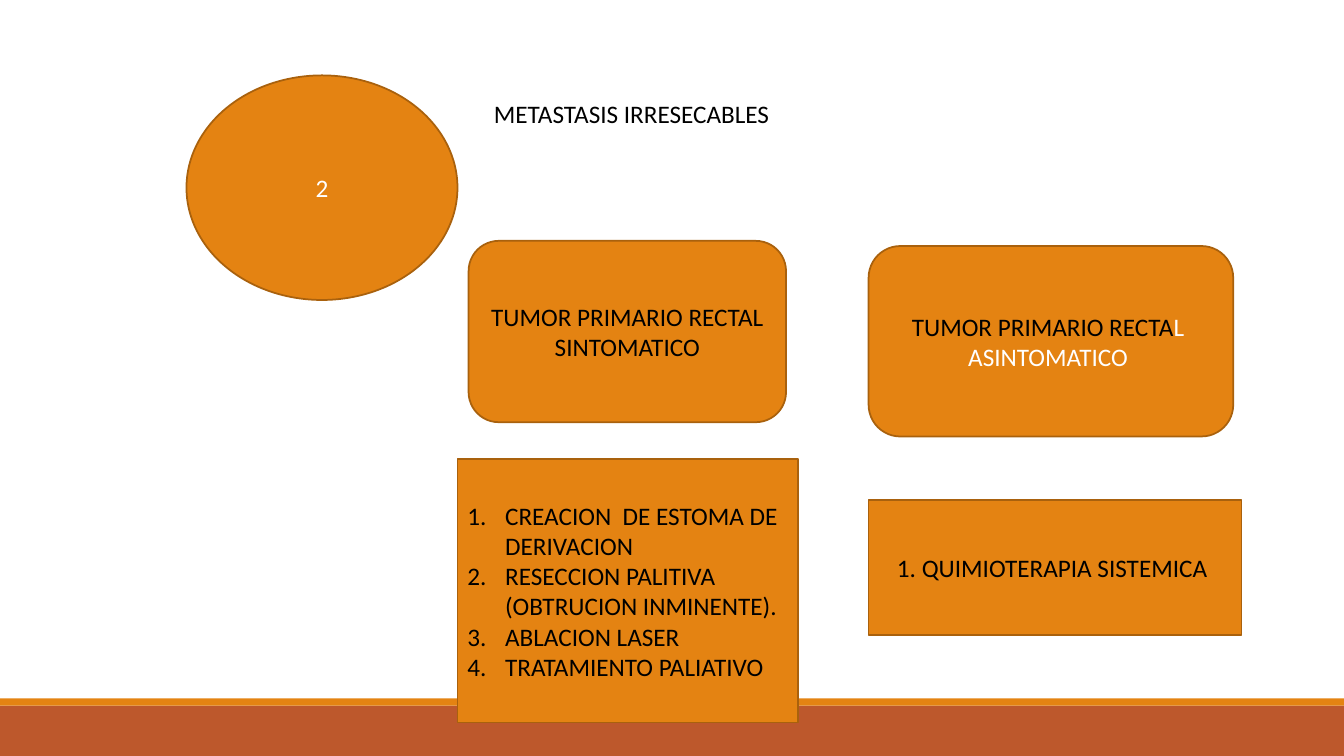
from lxml.etree import SubElement
from pptx import Presentation
from pptx.dml.color import RGBColor
from pptx.enum.shapes import MSO_SHAPE
from pptx.enum.text import MSO_ANCHOR, MSO_AUTO_SIZE, PP_ALIGN
from pptx.oxml.ns import qn
from pptx.util import Cm, Pt

ORANGE, BROWN, RUST = "E48312", "A9610D", "BD582C"
BLACK, WHITE = "000000", "FFFFFF"


def color(code):
    return RGBColor.from_string(code)


def write(para, runs, align):
    """Fill a paragraph with (text, colour) runs."""
    para.alignment = align
    for text, code in runs:
        run = para.add_run()
        run.text = text
        for name, value in {"name": "Calibri", "size": Pt(18), "bold": False}.items():
            setattr(run.font, name, value)
        run.font.color.rgb = color(code)


deck = Presentation()
deck.slide_width, deck.slide_height = Cm(33.87), Cm(19.05)
slide = deck.slides.add_slide(deck.slide_layouts[5])

# Footer bands
for top, height, fill in [(17.78, 1.27, RUST), (17.6, 0.18, ORANGE)]:
    band = slide.shapes.add_shape(
        MSO_SHAPE.RECTANGLE, 0, Cm(top), deck.slide_width, Cm(height))
    band.shadow.inherit = False
    band.fill.solid()
    band.fill.fore_color.rgb = color(fill)
    band.line.fill.background()

# Heading
title = slide.shapes.title
place = {"left": 12.19, "top": 2.36, "width": 13.31, "height": 1.02}
for name, value in place.items():
    setattr(title, name, Cm(value))
frame = title.text_frame
frame.auto_size = MSO_AUTO_SIZE.NONE
frame.vertical_anchor = MSO_ANCHOR.TOP
write(frame.paragraphs[0], [("METASTASIS IRRESECABLES ", BLACK)], PP_ALIGN.LEFT)

# Boxes: shape, left, top, width, height, runs of each paragraph
steps = [
    "CREACION  DE ESTOMA DE DERIVACION ",
    "RESECCION PALITIVA (OBTRUCION INMINENTE).",
    "ABLACION LASER ",
    "TRATAMIENTO PALIATIVO ",
]
boxes = [
    (MSO_SHAPE.OVAL, 4.7, 1.9, 6.83, 5.66, [[("2", WHITE)]]),
    (MSO_SHAPE.ROUNDED_RECTANGLE, 11.81, 6.07, 8, 4.57,
     [[("TUMOR PRIMARIO RECTAL SINTOMATICO", BLACK)]]),
    (MSO_SHAPE.ROUNDED_RECTANGLE, 21.89, 6.2, 9.19, 4.8,
     [[("TUMOR PRIMARIO RECTA", BLACK), ("L  ASINTOMATICO ", WHITE)]]),
    (MSO_SHAPE.RECTANGLE, 11.53, 11.56, 8.59, 6.65,
     [[(step, BLACK)] for step in steps]),
    (MSO_SHAPE.RECTANGLE, 21.89, 12.6, 9.4, 3.4,
     [[("1. QUIMIOTERAPIA SISTEMICA ", BLACK)]]),
]
for kind, left, top, width, height, paras in boxes:
    box = slide.shapes.add_shape(kind, Cm(left), Cm(top), Cm(width), Cm(height))
    box.shadow.inherit = False
    box.fill.solid()
    box.fill.fore_color.rgb = color(ORANGE)
    box.line.color.rgb = color(BROWN)
    box.line.width = Pt(1.25)
    frame = box.text_frame
    frame.word_wrap = True
    frame.vertical_anchor = MSO_ANCHOR.MIDDLE
    listed = len(paras) > 1
    for i, runs in enumerate(paras):
        para = frame.add_paragraph() if i else frame.paragraphs[0]
        write(para, runs, PP_ALIGN.LEFT if listed else PP_ALIGN.CENTER)
        if listed:
            props = para._p.get_or_add_pPr()
            props.set("marL", str(Cm(0.95)))
            props.set("indent", str(-Cm(0.95)))
            SubElement(props, qn("a:buFont"), typeface="+mj-lt")
            SubElement(props, qn("a:buAutoNum"), type="arabicPeriod")

deck.save("out.pptx")
